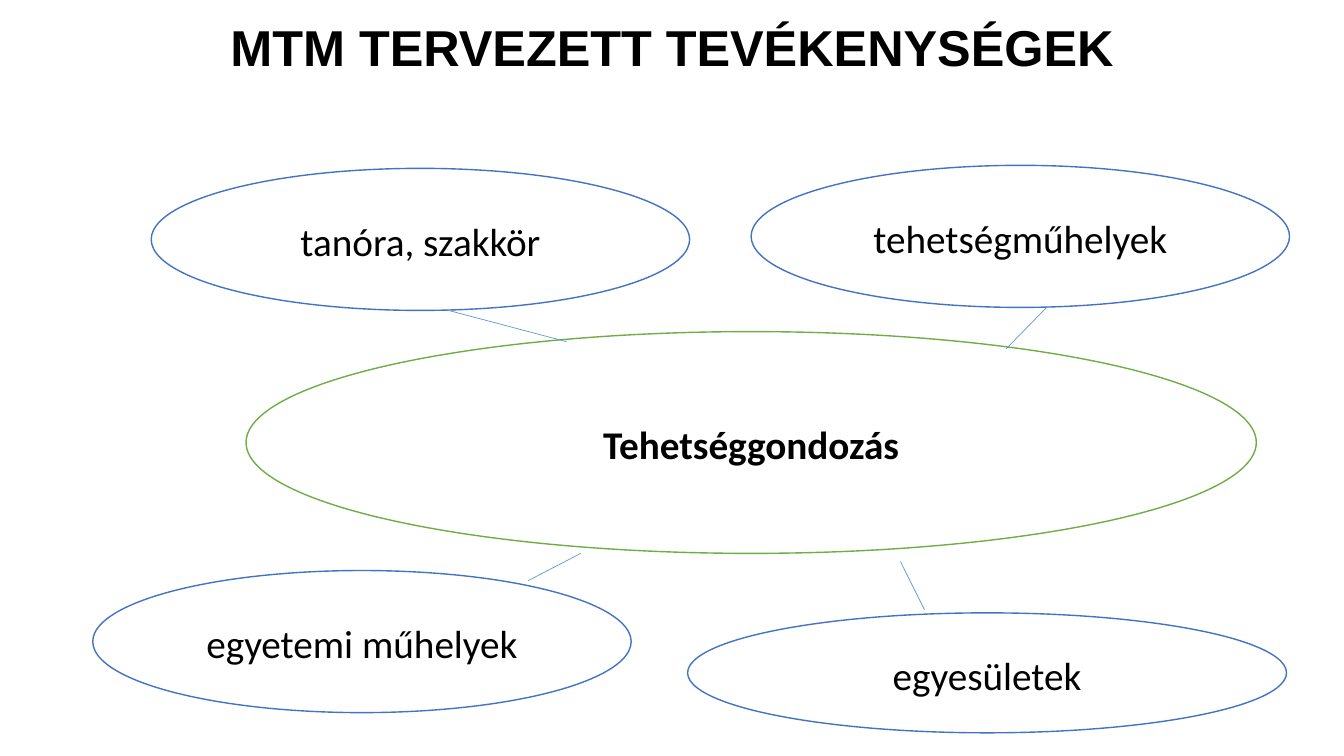
from lxml import etree
from pptx import Presentation
from pptx import util as u
from pptx.dml.color import RGBColor
from pptx.enum import shapes, text
from pptx.oxml.ns import qn

PX = 9144
BLUE, GREEN, LINK = "4472C4", "70AD47", "5B9BD5"

ACTIVITIES = [
    ("egyetemi műhelyek", (92, 566, 534, 141), 8),
    ("egyesületek", (682, 608, 594, 119), 0),
    ("tehetségműhelyek", (745, 164, 534, 141), 8),
    ("tanóra, szakkör", (150, 167, 534, 141), 8),
]
LINKS = [
    (445, 308, 562, 339),
    (1039, 304, 998, 346),
    (576, 549, 524, 576),
    (893, 557, 917, 605),
]


def px(*lengths):
    return [u.Emu(length * PX) for length in lengths]


def color(hex_value):
    return RGBColor.from_string(hex_value)


def write(frame, words, size, font, bold, spacing, after=0):
    frame.word_wrap = True
    frame.vertical_anchor = text.MSO_ANCHOR.MIDDLE
    paragraph = frame.paragraphs[0]
    paragraph.text = words
    paragraph.alignment = text.PP_ALIGN.CENTER
    paragraph.line_spacing = spacing
    paragraph.space_after = u.Pt(after)
    paragraph.font.size = u.Pt(size)
    paragraph.font.name = font
    paragraph.font.bold = bold
    paragraph.font.color.rgb = color("000000")


def add_title(slide, words, box):
    title = slide.shapes.add_textbox(*px(*box))
    write(title.text_frame, words, 36, "Arial", True, 0.9)


def add_bubble(slide, words, box, outline, bold=False, after=8):
    bubble = slide.shapes.add_shape(shapes.MSO_SHAPE.OVAL, *px(*box))
    bubble.shadow.inherit = False
    bubble.fill.solid()
    bubble.fill.fore_color.rgb = color("FFFFFF")
    bubble.line.color.rgb = color(outline)
    bubble.line.width = u.Pt(1)
    write(bubble.text_frame, words, 28, "Calibri", bold, 1.07, after)


def add_link(slide, ends):
    link = slide.shapes.add_connector(shapes.MSO_CONNECTOR.STRAIGHT, *px(*ends))
    link.line.color.rgb = color(LINK)
    link.line.width = u.Pt(0.5)
    etree.SubElement(link._element.spPr, qn("a:effectLst"))


def main():
    deck = Presentation()
    deck.slide_width, deck.slide_height = px(1333, 750)
    slide = deck.slides.add_slide(deck.slide_layouts[6])

    add_title(slide, "MTM TERVEZETT TEVÉKENYSÉGEK", (92, 6, 1150, 88))
    add_bubble(slide, "Tehetséggondozás", (244, 329, 1002, 220), GREEN, bold=True)
    for activity, box, after in ACTIVITIES:
        add_bubble(slide, activity, box, BLUE, after=after)
    for ends in LINKS:
        add_link(slide, ends)

    deck.save("out.pptx")


if __name__ == "__main__":
    main()
